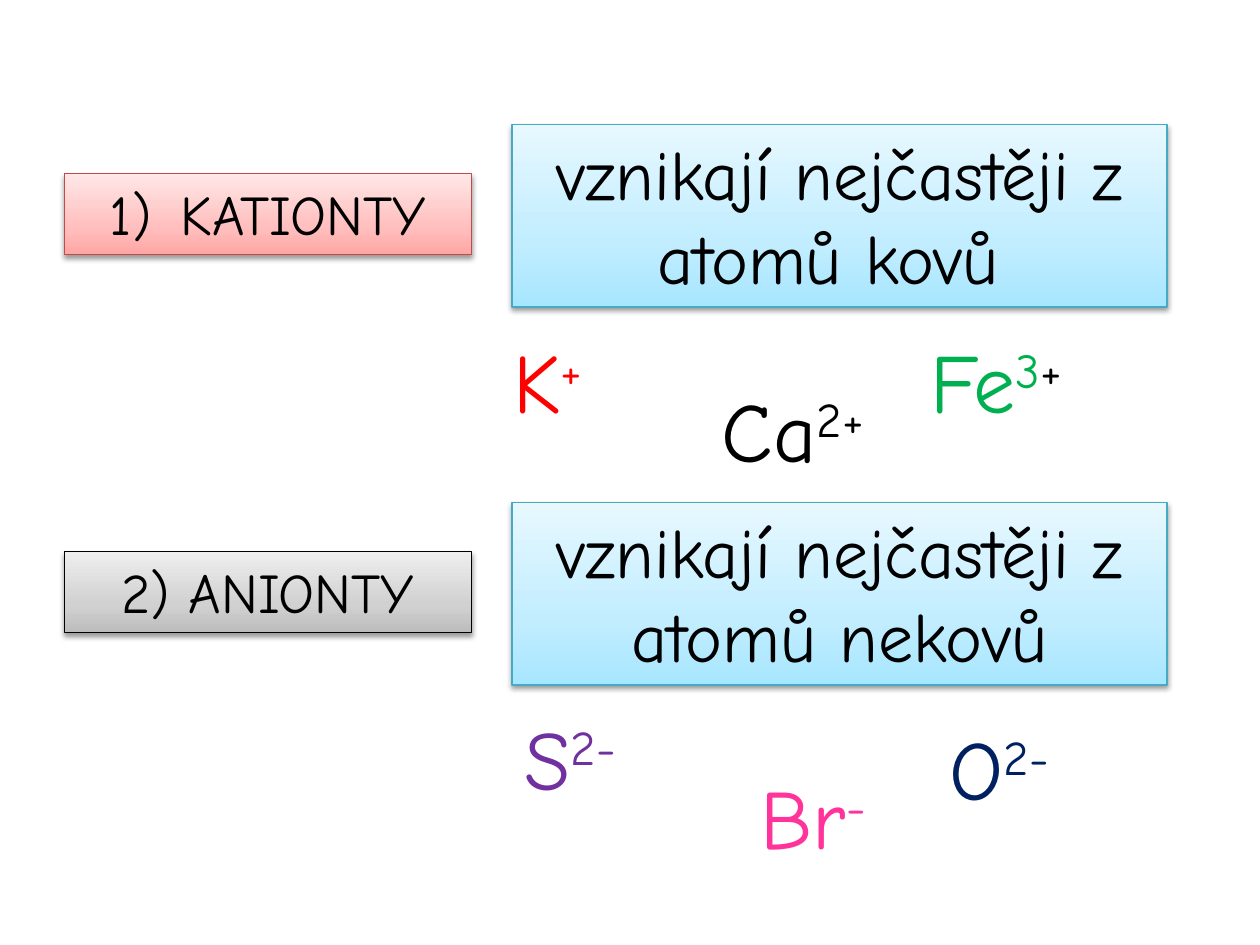
from copy import deepcopy

from lxml import etree
from pptx import Presentation
from pptx.dml.color import RGBColor
from pptx.enum.shapes import MSO_SHAPE
from pptx.enum.text import MSO_ANCHOR, MSO_AUTO_SIZE, PP_ALIGN
from pptx.oxml import parse_xml
from pptx.oxml.ns import nsdecls, qn
from pptx.util import Cm, Pt

FONT = "Comic Neue"
COLORS = {
    "black": "000000", "red": "FF0000", "green": "00B050",
    "pink": "FF3399", "purple": "7030A0", "navy": "002060",
}
# Box themes: line colour, then the gradient from bottom to top
THEMES = {
    "rose": ("BF4C48", ("FFA6A5", "FFC0BF", "FFE7E7")),
    "gray": ("000000", ("BDBDBD", "D1D1D1", "EEEEEE")),
    "sky": ("46AAC5", ("A7E6FF", "C1EDFF", "E7F8FF")),
}
STOPS = (0, 0.35, 1)
SHADOW = (
    f'<a:effectLst {nsdecls("a")}><a:outerShdw blurRad="39400" dist="20300" '
    'dir="5400000" rotWithShape="0"><a:srgbClr val="000000">'
    '<a:alpha val="38000"/></a:srgbClr></a:outerShdw></a:effectLst>'
)


def style_run(r, size, color):
    r.font.name = FONT
    r.font.size = Pt(size)
    r.font.color.rgb = RGBColor.from_string(COLORS[color])


def fill_gradient(shape, hexes):
    shape.fill.gradient()
    shape.fill.gradient_angle = 90
    gs_list = shape._element.spPr.find(qn("a:gradFill")).find(qn("a:gsLst"))
    gs_list.append(deepcopy(gs_list[-1]))
    for stop, position, color in zip(shape.fill.gradient_stops, STOPS, hexes):
        stop.position = position
        stop.color.rgb = RGBColor.from_string(color)


def add_box(s, left, top, width, height, text, size, theme):
    line, hexes = THEMES[theme]
    sp = s.shapes.add_shape(MSO_SHAPE.RECTANGLE, Cm(left), Cm(top), Cm(width), Cm(height))
    fill_gradient(sp, hexes)
    sp.line.color.rgb = RGBColor.from_string(line)
    sp.line.width = Pt(0.75)
    sp._element.spPr.append(parse_xml(SHADOW))
    tf = sp.text_frame
    tf.word_wrap = True
    tf.vertical_anchor = MSO_ANCHOR.TOP
    tf.auto_size = MSO_AUTO_SIZE.SHAPE_TO_FIT_TEXT
    p = tf.paragraphs[0]
    p.text = text
    p.alignment = PP_ALIGN.CENTER
    style_run(p.runs[0], size, "black")
    return sp


def number_paragraph(p):
    pPr = p._p.get_or_add_pPr()
    pPr.set("marL", str(Cm(1.43)))
    pPr.set("indent", str(-Cm(1.43)))
    etree.SubElement(pPr, qn("a:buFont"), typeface=FONT)
    etree.SubElement(pPr, qn("a:buAutoNum"), type="arabicParenR")


def add_ion(s, left, top, width, symbol, *charges):
    """Write a symbol and its raised charges, each a (text, colour) pair."""
    tb = s.shapes.add_textbox(Cm(left), Cm(top), Cm(width), Cm(2.31))
    tf = tb.text_frame
    tf.word_wrap = True
    tf.auto_size = MSO_AUTO_SIZE.SHAPE_TO_FIT_TEXT
    for i, (text, color) in enumerate((symbol, *charges)):
        r = tf.paragraphs[0].add_run()
        r.text = text
        style_run(r, 48, color)
        if i:
            r._r.get_or_add_rPr().set("baseline", "30000")


def add_section(s, left, top, label, theme, info, ions, numbered=False):
    """Place a label, its explanation and example ions from the given corner."""
    label_box = add_box(s, left, top + 0.99, 8.2, 1.63, label, 32, theme)
    if numbered:
        number_paragraph(label_box.text_frame.paragraphs[0])
    add_box(s, left + 9.02, top, 13.21, 3.68, info, 40, "sky")
    for dx, dy, width, *parts in ions:
        add_ion(s, left + dx, top + dy, width, *parts)


def main():
    prs = Presentation()
    prs.slide_width, prs.slide_height = Cm(25.4), Cm(19.05)
    s = prs.slides.add_slide(prs.slide_layouts[6])
    cations = [
        (8.81, 4.01, 2.39, ("K", "red"), ("+", "red")),
        (13, 5, 5.21, ("Ca", "black"), ("2+", "black")),
        (17.2, 4.01, 5.21, ("Fe", "green"), ("3", "green"), ("+", "black")),
    ]
    anions = [
        (9.02, 3.99, 5.21, ("S", "purple"), ("2-", "purple")),
        (13.79, 5.18, 3.2, ("Br", "pink"), ("-", "pink")),
        (17.6, 4.19, 5.21, ("O", "navy"), ("2-", "navy")),
    ]
    add_section(s, 1.3, 2.51, "KATIONTY", "rose",
                "vznikají nejčastěji z atomů kovů ", cations, numbered=True)
    add_section(s, 1.3, 10.13, "2) ANIONTY", "gray",
                "vznikají nejčastěji z atomů nekovů", anions)
    prs.save("out.pptx")


if __name__ == "__main__":
    main()
